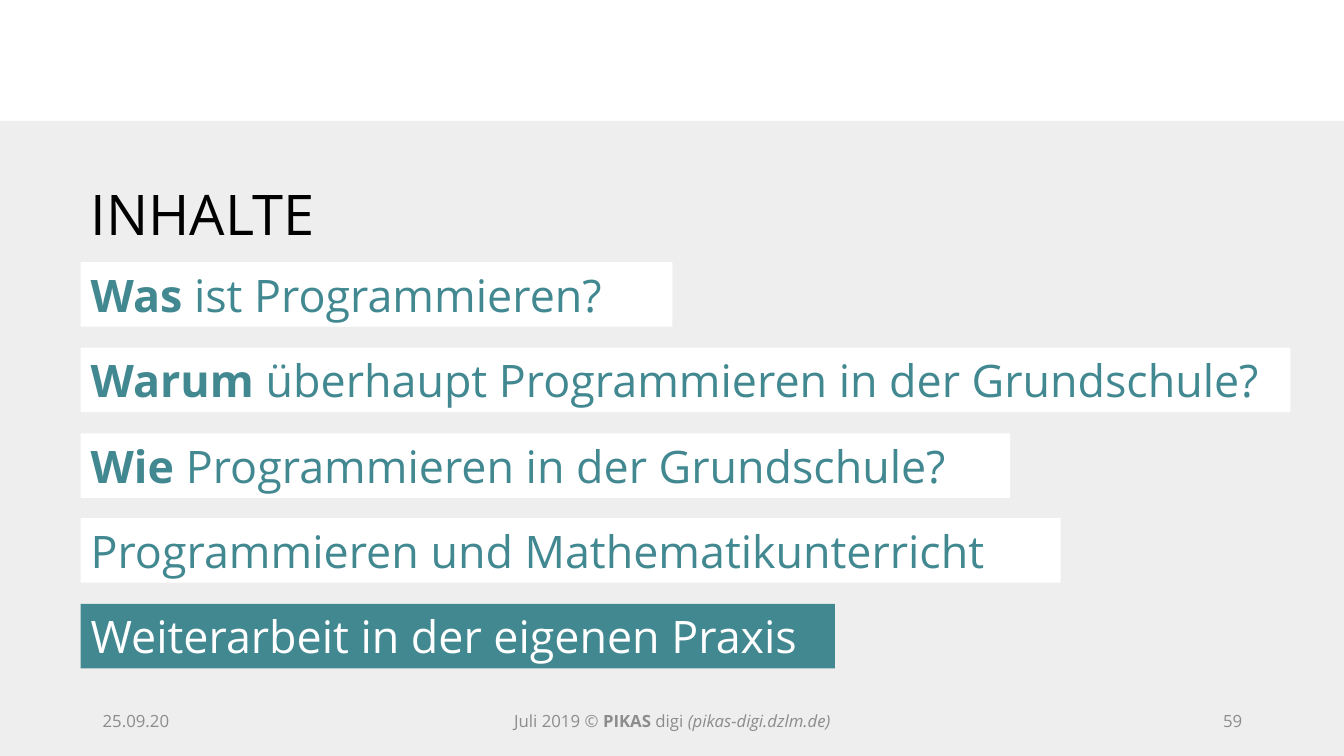
from dataclasses import dataclass

from pptx import Presentation
from pptx.dml.color import RGBColor
from pptx.enum.shapes import MSO_SHAPE
from pptx.enum.text import MSO_ANCHOR, PP_ALIGN
from pptx.util import Emu, Pt

RECTANGLE = MSO_SHAPE.RECTANGLE
MIDDLE = MSO_ANCHOR.MIDDLE
LEFT, CENTER, RIGHT = PP_ALIGN.LEFT, PP_ALIGN.CENTER, PP_ALIGN.RIGHT
EMU_PER_PX = 9144
BLANK_LAYOUT = 6


@dataclass(frozen=True)
class Theme:
    """Colours, font and type sizes of the slide."""
    font: str = "Open Sans"
    white: str = "FFFFFF"
    panel: str = "EEEEEE"
    teal: str = "428891"
    black: str = "000000"
    grey: str = "8C8C8C"
    title_size: int = 40
    topic_size: int = 32
    footer_size: int = 12


THEME = Theme()

TOPICS = [
    (587, [("Was", "b"), (" ist Programmieren?", "")]),
    (1200, [("Warum", "b"), (" überhaupt Programmieren in der Grundschule?", "")]),
    (922, [("Wie ", "b"), ("Programmieren in der Grundschule?", "")]),
    (972, [("Programmieren und Mathematikunterricht", "")]),
    (748, [("Weiterarbeit in der eigenen Praxis", "")]),
]
CURRENT_TOPIC = 4
TOPIC_LEFT, TOPIC_TOP, TOPIC_HEIGHT, TOPIC_PITCH = 80, 260, 64, 84.75

FOOTER_TOP, FOOTER_HEIGHT = 695, 40
FOOTERS = [
    (92, 300, LEFT, [("25.09.20", "")]),
    (442, 450, CENTER, [("Juli 2019 © ", ""), ("PIKAS", "b"), (" digi ", ""),
                        ("(pikas-digi.dzlm.de)", "i")]),
    (942, 300, RIGHT, [("59", "")]),
]


def px(*lengths):
    """Turn pixel lengths into EMU."""
    return [Emu(length * EMU_PER_PX) for length in lengths]


def write(frame, runs, *, size, color, align=LEFT):
    """Write (text, style) runs as one vertically centred paragraph."""
    frame.word_wrap = True
    frame.vertical_anchor = MIDDLE
    paragraph = frame.paragraphs[0]
    paragraph.alignment = align
    for text, style in runs:
        run = paragraph.add_run()
        run.text = text
        run.font.name = THEME.font
        run.font.size = Pt(size)
        run.font.color.rgb = RGBColor.from_string(color)
        run.font.bold = style == "b"
        run.font.italic = style == "i"


def add_bar(slide, box, fill):
    """Add a plain filled rectangle."""
    bar = slide.shapes.add_shape(RECTANGLE, *px(*box))
    bar.shadow.inherit = False
    bar.fill.solid()
    bar.fill.fore_color.rgb = RGBColor.from_string(fill)
    bar.line.fill.background()
    return bar


def add_label(slide, box, runs, **text_format):
    """Add a text box holding one line."""
    label = slide.shapes.add_textbox(*px(*box))
    write(label.text_frame, runs, **text_format)


def add_topic(slide, index, width, runs):
    """Add one agenda bar, inverted if it is the current topic."""
    top = TOPIC_TOP + round(index * TOPIC_PITCH)
    fill, color = THEME.white, THEME.teal
    if index == CURRENT_TOPIC:
        fill, color = color, fill
    topic = add_bar(slide, (TOPIC_LEFT, top, width, TOPIC_HEIGHT), fill)
    write(topic.text_frame, runs, size=THEME.topic_size, color=color)


def main():
    """Build the agenda slide and save it."""
    deck = Presentation()
    deck.slide_width, deck.slide_height = px(1333, 750)
    slide = deck.slides.add_slide(deck.slide_layouts[BLANK_LAYOUT])
    add_bar(slide, (0, 120, 1333, 630), THEME.panel)
    for index, (width, runs) in enumerate(TOPICS):
        add_topic(slide, index, width, runs)
    add_label(slide, (TOPIC_LEFT, 173, 445, 77), [("INHALTE", "")],
              size=THEME.title_size, color=THEME.black)
    for left, width, align, runs in FOOTERS:
        add_label(slide, (left, FOOTER_TOP, width, FOOTER_HEIGHT), runs,
                  size=THEME.footer_size, color=THEME.grey, align=align)
    deck.save("out.pptx")


if __name__ == "__main__":
    main()
